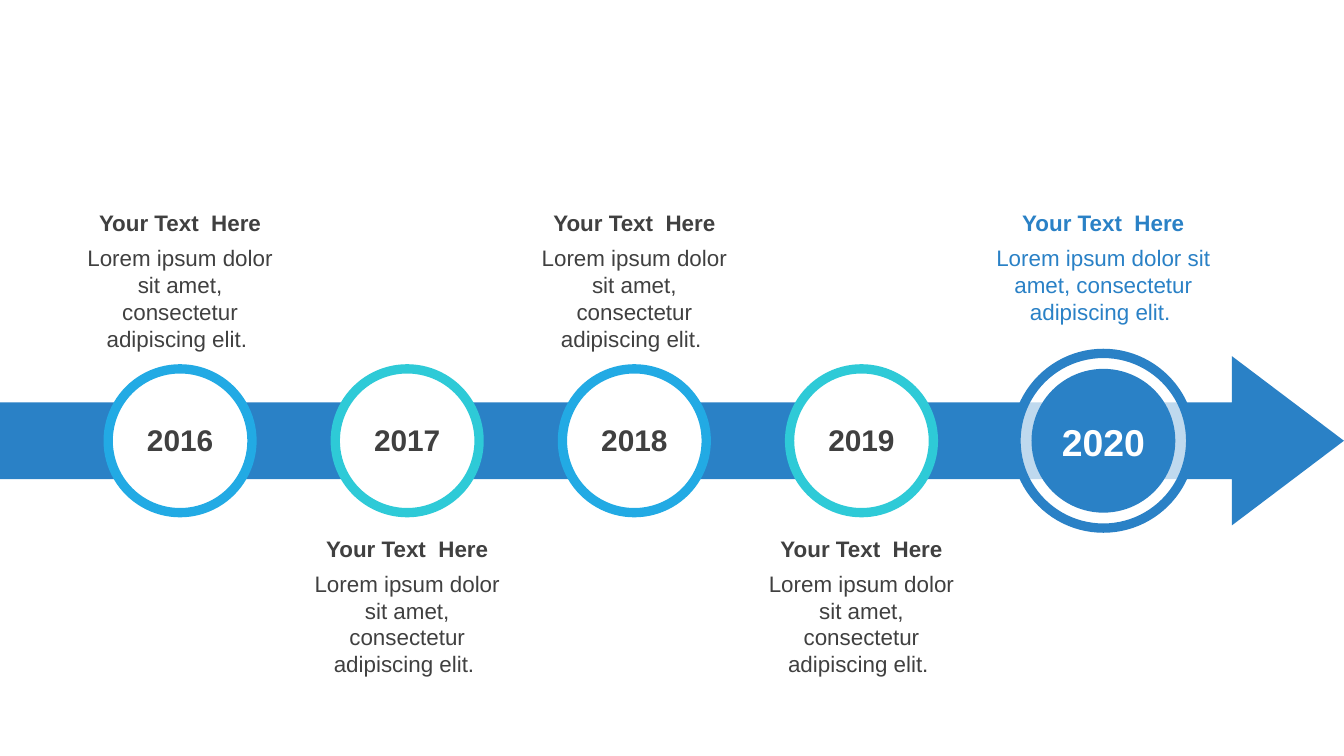
from lxml.etree import SubElement
from pptx import Presentation
from pptx.dml.color import RGBColor
from pptx.enum.shapes import MSO_SHAPE
from pptx.enum.text import PP_ALIGN
from pptx.oxml.ns import qn
from pptx.util import Inches, Pt

BLUE, SKY, TEAL = "2A81C6", "22AAE4", "2ECAD7"
WHITE, DARK = "FFFFFF", "404040"
HEADING = "Your Text  Here"
BODY = "Lorem ipsum dolor sit amet, consectetur adipiscing elit. "
MIDDLE = 3.28  # height of the timeline's axis


def rgb(value):
    return RGBColor.from_string(value)


class TimelineSlide:
    font = "Arial"
    ring_width = 5

    def __init__(self, prs):
        self.s = prs.slides.add_slide(prs.slide_layouts[6])

    def shape(self, kind, x, y, w, h, fill, line=None, opacity=None):
        sp = self.s.shapes.add_shape(kind, Inches(x), Inches(y), Inches(w), Inches(h))
        sp.shadow.inherit = False
        sp.fill.solid()
        sp.fill.fore_color.rgb = rgb(fill)
        if opacity is not None:
            color = sp.fill._xPr.find(qn("a:solidFill"))[0]
            SubElement(color, qn("a:alpha"), val=str(opacity * 1000))
        if line:
            sp.line.color.rgb = rgb(line)
            sp.line.width = Pt(self.ring_width)
        else:
            sp.line.fill.background()
        return sp

    def circle(self, cx, size, fill, line=None, opacity=None):
        return self.shape(MSO_SHAPE.OVAL, cx - size / 2, MIDDLE - size / 2,
                          size, size, fill, line, opacity)

    def text(self, cx, y, w, h, text, size, color, bold=False):
        """Add a centred text box around the vertical line at cx."""
        box = self.s.shapes.add_textbox(Inches(cx - w / 2), Inches(y), Inches(w), Inches(h))
        tf = box.text_frame
        tf.word_wrap = True
        p = tf.paragraphs[0]
        p.text = text
        p.alignment = PP_ALIGN.CENTER
        p.font.name = self.font
        p.font.size = Pt(size)
        p.font.bold = bold
        p.font.color.rgb = rgb(color)

    def caption(self, cx, y, w, body_height, color):
        self.text(cx, y, w, 0.3, HEADING, 12, color, bold=True)
        self.text(cx, y + 0.26, w, body_height, BODY, 12, color)


def main():
    prs = Presentation()
    prs.slide_width = Inches(10)
    prs.slide_height = prs.slide_width * 9 // 16
    slide = TimelineSlide(prs)

    arrow = slide.shape(MSO_SHAPE.RIGHT_ARROW, 0, MIDDLE - 0.63, 10, 1.26, BLUE)
    arrow.adjustments[0], arrow.adjustments[1] = 0.453, 0.662

    for i, year in enumerate(["2016", "2017", "2018", "2019"]):
        cx = 1.34 + 1.69 * i
        below = i % 2 == 1
        slide.circle(cx, 1.07, WHITE, TEAL if below else SKY)
        slide.text(cx, 3.09, 0.73, 0.37, year, 16, DARK, bold=True)
        slide.caption(cx, 3.93 if below else 1.51, 1.59, 0.91, DARK)

    final_x = 8.21
    slide.circle(final_x, 1.3, WHITE, BLUE, opacity=70)
    slide.circle(final_x, 1.07, BLUE)
    slide.text(final_x, 3.07, 0.97, 0.77, "2020", 20, WHITE, bold=True)
    slide.caption(final_x, 1.51, 2.03, 0.71, BLUE)

    prs.save("out.pptx")


if __name__ == "__main__":
    main()
